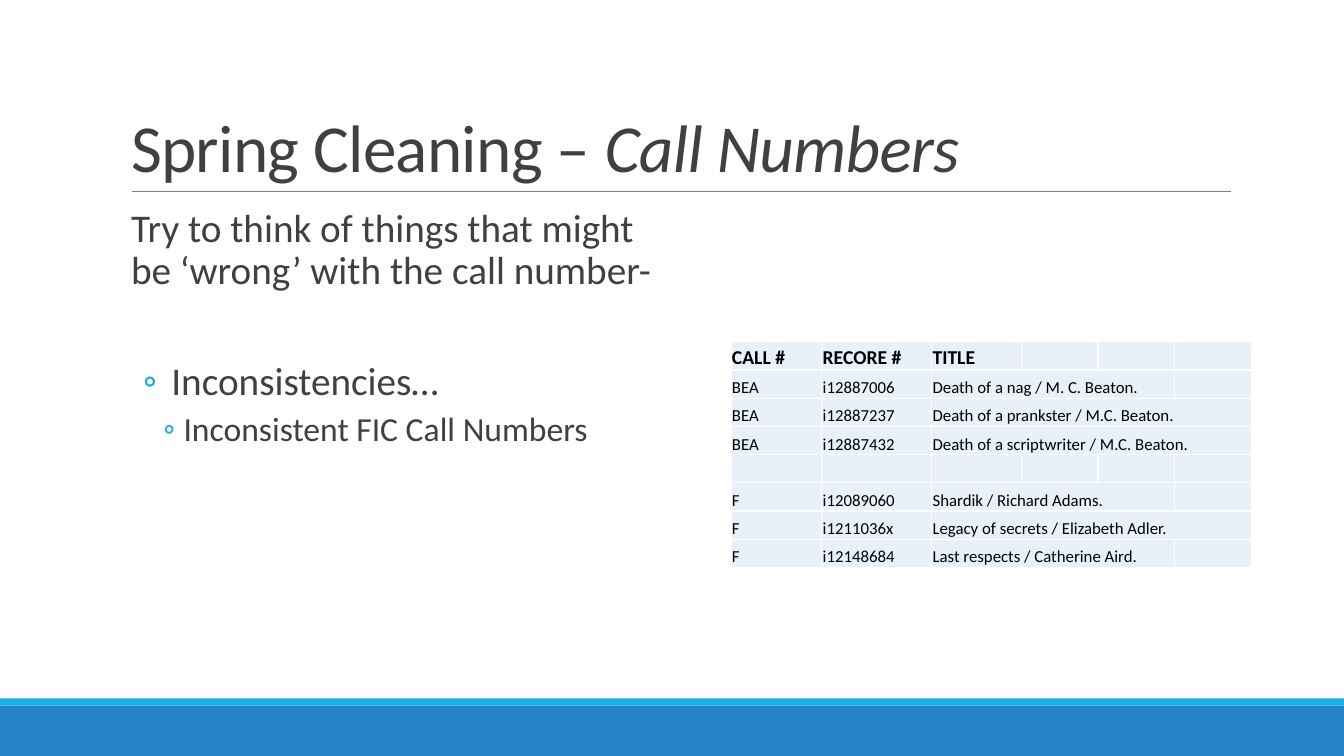
from lxml import etree
from pptx import Presentation
from pptx.dml.color import RGBColor
from pptx.enum.shapes import MSO_CONNECTOR, MSO_SHAPE
from pptx.enum.text import MSO_ANCHOR, MSO_AUTO_SIZE, PP_ALIGN
from pptx.oxml.ns import qn
from pptx.util import Inches, Pt

RECTANGLE = MSO_SHAPE.RECTANGLE
STRAIGHT = MSO_CONNECTOR.STRAIGHT
BOTTOM, TOP = MSO_ANCHOR.BOTTOM, MSO_ANCHOR.TOP
NO_FIT = MSO_AUTO_SIZE.NONE
LEFT = PP_ALIGN.LEFT

FONT = "Calibri"
COLOURS = {"text": "404040", "band": "2683C6", "accent": "1CADE4", "rule": "808080",
           "cell": "E8F1FA", "border": "FFFFFF", "ink": "000000"}
PAGE_WIDTH, PAGE_HEIGHT = 13.33, 7.5

COLUMN_WIDTHS = [0.9, 1.09, 0.89, 0.76, 0.76, 0.76]
ROW_HEIGHT = 0.28
TITLE_COLUMN = 2
RECORDS = [
    ("CALL #", "RECORE #", "TITLE", 1),
    ("BEA", "i12887006", "Death of a nag / M. C. Beaton.", 3),
    ("BEA", "i12887237", "Death of a prankster / M.C. Beaton.", 4),
    ("BEA", "i12887432", "Death of a scriptwriter / M.C. Beaton.", 4),
    ("", "", "", 1),
    ("F", "i12089060", "Shardik / Richard Adams.", 3),
    ("F", "i1211036x", "Legacy of secrets / Elizabeth Adler.", 4),
    ("F", "i12148684", "Last respects / Catherine Aird.", 3),
]
POINTS = [
    ("Try to think of things that might be ‘wrong’ with the call number-", 0, 28, 12, 2, 0.1, 0, None),
    ("Inconsistencies…", 1, 28, 47, 4, 0.5, -0.28, "◦"),
    ("Inconsistent FIC Call Numbers", 2, 24, 2, 4, 0.62, -0.2, "◦"),
]


def colour(name):
    """Return the named colour."""
    return RGBColor.from_string(COLOURS[name])


def style_span(span, size, name):
    """Set the font, size and colour of a run."""
    span.font.name = FONT
    span.font.size = Pt(size)
    span.font.color.rgb = colour(name)


def place(shape, box):
    """Move a shape to a box of left, top, width and height in inches."""
    shape.left, shape.top, shape.width, shape.height = map(Inches, box)


def add_bar(page, box, name):
    """Add a plain filled rectangle."""
    bar = page.shapes.add_shape(RECTANGLE, *map(Inches, box))
    bar.shadow.inherit = False
    bar.fill.solid()
    bar.fill.fore_color.rgb = colour(name)
    bar.line.fill.background()


def add_footer(page, box):
    """Add the footer band with its accent strip along the top."""
    left, top, width, height = box
    strip = 0.07
    add_bar(page, (left, top + strip, width, height - strip), "band")
    add_bar(page, (left, top, width, strip), "accent")


def add_title(page, box):
    """Fill the title and draw the rule beneath it."""
    left, top, width, height = box
    title = page.shapes.title
    place(title, box)
    frame = title.text_frame
    frame.auto_size = NO_FIT
    frame.vertical_anchor = BOTTOM
    para = frame.paragraphs[0]
    para.alignment = LEFT
    para.line_spacing = 0.85
    for text, italic in (("Spring Cleaning – ", False), ("Call Numbers", True)):
        span = para.add_run()
        span.text = text
        style_span(span, 48, "text")
        span.font.italic = italic
        span.font._element.set("spc", "-50")

    base = Inches(top + height)
    rule = page.shapes.add_connector(STRAIGHT, Inches(left + 0.11), base,
                                     Inches(left + width + 0.01), base)
    rule.line.color.rgb = colour("rule")
    rule.line.width = Pt(0.5)
    etree.SubElement(rule._element.spPr, qn("a:effectLst"))


def set_bullet(para, margin, indent, mark):
    """Set the indents of a paragraph and its bullet, if it has one."""
    properties = para._p.get_or_add_pPr()
    properties.set("marL", str(Inches(margin)))
    properties.set("indent", str(Inches(indent)))
    if mark is None:
        etree.SubElement(properties, qn("a:buNone"))
        return
    tint = etree.SubElement(properties, qn("a:buClr"))
    etree.SubElement(tint, qn("a:srgbClr"), val=COLOURS["accent"])
    etree.SubElement(properties, qn("a:buFont"), typeface=FONT)
    etree.SubElement(properties, qn("a:buChar"), char=mark)


def add_points(page, box):
    """Fill the body placeholder with the points."""
    body = page.placeholders[1]
    place(body, box)
    frame = body.text_frame
    frame.auto_size = NO_FIT
    frame.vertical_anchor = TOP
    frame.margin_left = frame.margin_right = 0
    frame.text = "\n".join(point[0] for point in POINTS)
    for para, point in zip(frame.paragraphs, POINTS):
        _, level, size, before, after, margin, indent, mark = point
        para.level = level
        para.alignment = LEFT
        para.line_spacing = 0.9
        para.space_before = Pt(before)
        para.space_after = Pt(after)
        set_bullet(para, margin, indent, mark)
        style_span(para.runs[0], size, "text")


def style_cell(cell, size, bold):
    """Set the fill, borders, margins and text of a table cell."""
    cell.fill.solid()
    cell.fill.fore_color.rgb = colour("cell")
    cell.vertical_anchor = BOTTOM
    cell.margin_left = cell.margin_right = cell.margin_top = Inches(0.01)
    cell.margin_bottom = 0
    properties = cell._tc.get_or_add_tcPr()
    for position, side in enumerate(("a:lnL", "a:lnR", "a:lnT", "a:lnB")):
        border = etree.Element(qn(side), w=str(Pt(1)))
        fill = etree.SubElement(border, qn("a:solidFill"))
        etree.SubElement(fill, qn("a:srgbClr"), val=COLOURS["border"])
        properties.insert(position, border)
    para = cell.text_frame.paragraphs[0]
    for span in para.runs:
        style_span(span, size, "ink")
        span.font.bold = bold
    if not para.runs:
        etree.SubElement(para._p, qn("a:endParaRPr"), sz=str(size * 100))


def add_records(page, box):
    """Add the table of call numbers, records and titles."""
    frame = page.shapes.add_table(len(RECORDS), len(COLUMN_WIDTHS), *map(Inches, box))
    table = frame.table
    table.first_row = table.horz_banding = False
    for column, width in zip(table.columns, COLUMN_WIDTHS):
        column.width = Inches(width)
    for index, (*texts, reach) in enumerate(RECORDS):
        table.rows[index].height = Inches(ROW_HEIGHT)
        for column, text in enumerate(texts):
            table.cell(index, column).text = text
        for cell in table.rows[index].cells:
            style_cell(cell, 12 if index else 14, index == 0)
        if reach > 1:
            last = table.cell(index, TITLE_COLUMN + reach - 1)
            table.cell(index, TITLE_COLUMN).merge(last)


def main():
    """Build the slide and save it."""
    deck = Presentation()
    deck.slide_width, deck.slide_height = Inches(PAGE_WIDTH), Inches(PAGE_HEIGHT)
    page = deck.slides.add_slide(deck.slide_layouts[1])
    add_footer(page, (0, 6.93, PAGE_WIDTH, 0.57))
    add_title(page, (1.2, 0.31, 11, 1.59))
    add_points(page, (1.2, 2.02, 5.4, 4.4))
    add_records(page, (7.25, 3.39, sum(COLUMN_WIDTHS), ROW_HEIGHT * len(RECORDS)))
    deck.save("out.pptx")


if __name__ == "__main__":
    main()
